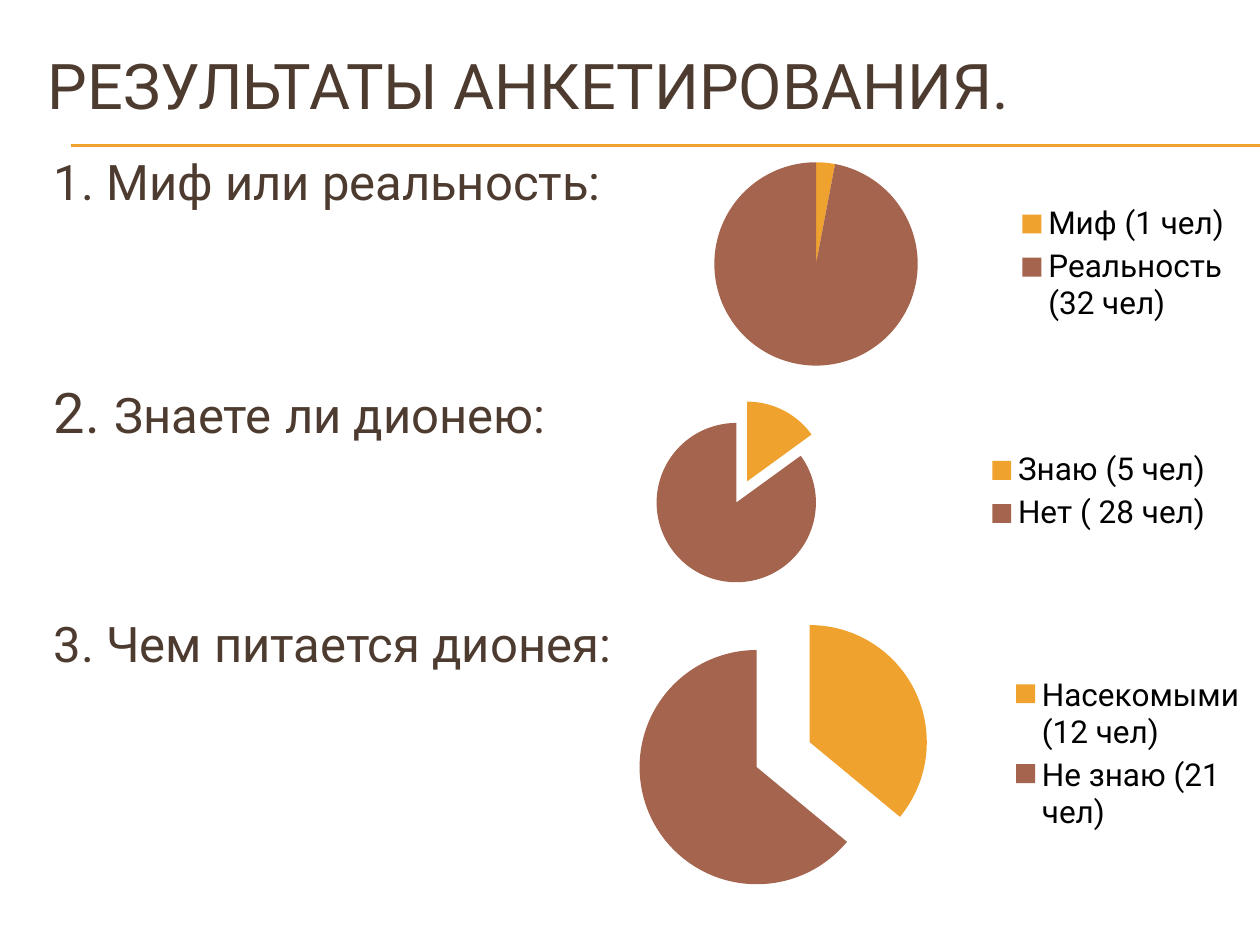
from lxml import etree
from pptx import Presentation
from pptx.chart.data import CategoryChartData
from pptx.dml.color import RGBColor
from pptx.enum.chart import XL_CHART_TYPE, XL_LEGEND_POSITION
from pptx.enum.shapes import MSO_CONNECTOR
from pptx.enum.text import MSO_ANCHOR
from pptx.oxml import parse_xml
from pptx.oxml.ns import nsdecls, qn
from pptx.util import Inches, Pt

FONT = "Roboto"
BROWN = RGBColor(0x4E, 0x3B, 0x30)
AMBER = RGBColor(0xF0, 0xA2, 0x2E)
SIENNA = RGBColor(0xA5, 0x64, 0x4E)
BLACK = RGBColor(0, 0, 0)

TITLE = [("РЕЗУЛЬТАТЫ АНКЕТИРОВАНИЯ.", 36)]
# Each question is a list of (text, size) runs
QUESTIONS = [
    [("1. Миф или реальность:", 28)],
    [("2. ", 32), ("Знаете", 28), (" ", 32), ("ли дионею:", 28)],
    [("3. Чем питается дионея:", 28)],
]
# Box in inches, answers with percentages, slice explosion
PIES = [
    ((4.92, 1.15, 4.96, 1.89), {"Миф (1 чел)": 3, "Реальность (32 чел)": 97}, 0),
    ((3.98, 3.04, 5.75, 1.73), {"Знаю (5 чел)": 15, "Нет ( 28 чел)": 85}, 15),
    ((4.45, 4.69, 5.55, 2.6), {"Насекомыми (12 чел)": 36, "Не знаю (21 чел)": 64}, 25),
]


def add_text(slide, box, paragraphs, anchor, gap=0):
    frame = slide.shapes.add_textbox(*map(Inches, box)).text_frame
    frame.word_wrap = True
    frame.vertical_anchor = anchor
    for index, runs in enumerate(paragraphs):
        paragraph = frame.add_paragraph() if index else frame.paragraphs[0]
        paragraph.space_before = Pt(gap if index else 0)
        for text, size in runs:
            run = paragraph.add_run()
            run.text = text
            run.font.name = FONT
            run.font.size = Pt(size)
            run.font.color.rgb = BROWN


def add_rule(slide, y):
    rule = slide.shapes.add_connector(
        MSO_CONNECTOR.STRAIGHT, Inches(0.56), Inches(y), Inches(10), Inches(y))
    rule.line.color.rgb = AMBER
    rule.line.width = Pt(0.75)
    etree.SubElement(rule._element.spPr, qn("a:effectLst"))


def add_pie(slide, box, answers, explosion):
    data = CategoryChartData()
    data.categories = list(answers)
    data.add_series("Series 1", list(answers.values()))
    chart = slide.shapes.add_chart(
        XL_CHART_TYPE.PIE, *map(Inches, box), data).chart
    chart.has_title = False
    chart.font.name = FONT
    chart.font.size = Pt(18)
    chart.font.color.rgb = BLACK
    chart.has_legend = True
    chart.legend.position = XL_LEGEND_POSITION.RIGHT
    chart.legend.include_in_layout = False
    plot = chart.plots[0]
    plot.vary_by_categories = True
    series = plot.series[0]
    for index, color in enumerate((AMBER, SIENNA)):
        fill = series.points[index].format.fill
        fill.solid()
        fill.fore_color.rgb = color
    # Explosion of the whole series comes before its points
    if explosion:
        series._element.find(qn("c:dPt")).addprevious(
            parse_xml(f'<c:explosion {nsdecls("c")} val="{explosion}"/>'))


presentation = Presentation()
presentation.slide_width = Inches(10)
presentation.slide_height = Inches(7.5)
slide = presentation.slides.add_slide(presentation.slide_layouts[6])

# Double rule under the title
for y in (1.15, 1.16):
    add_rule(slide, y)

# Title and questions
add_text(slide, (0.28, 0.21, 9.5, 0.92), [TITLE], MSO_ANCHOR.MIDDLE)
add_text(slide, (0.33, 1.15, 9.5, 5.5), QUESTIONS, MSO_ANCHOR.TOP, gap=96)

# Answers
for box, answers, explosion in PIES:
    add_pie(slide, box, answers, explosion)

presentation.save("out.pptx")
